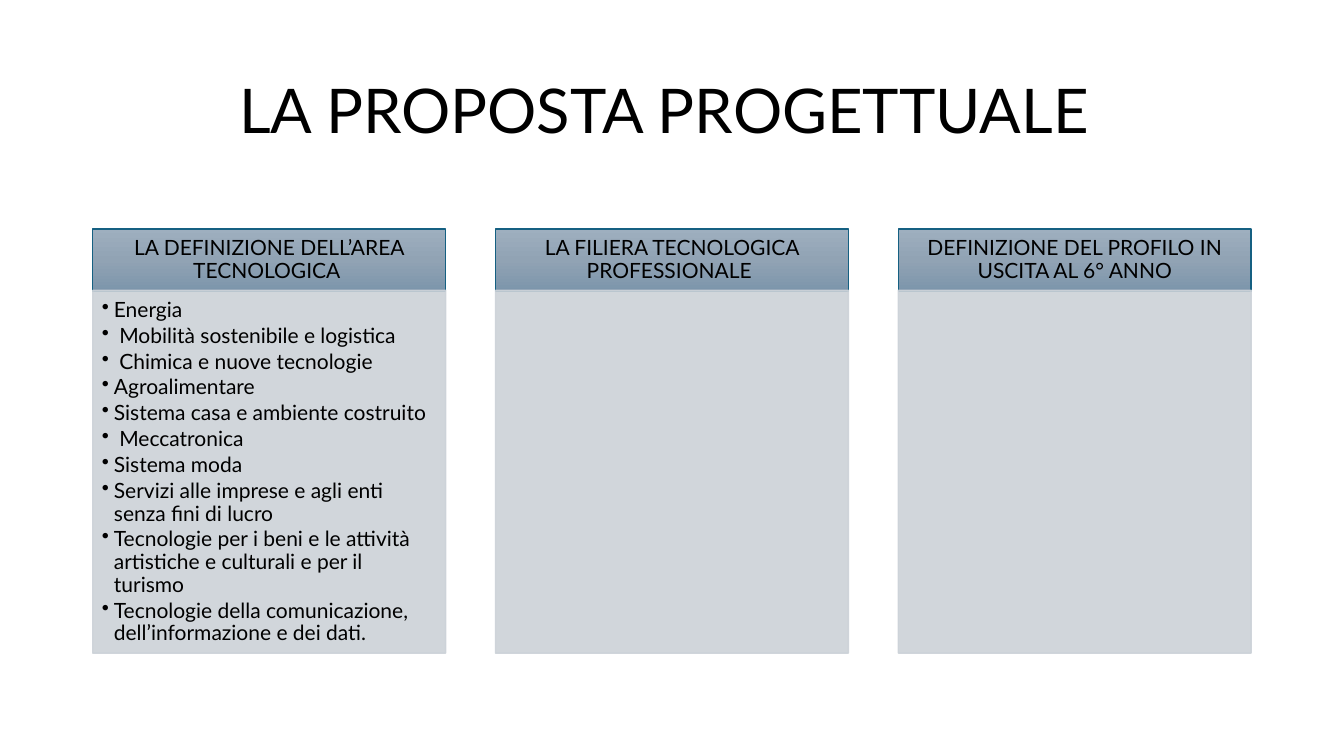
from copy import deepcopy

from lxml import etree
from pptx import Presentation
from pptx.dml.color import RGBColor
from pptx.enum import shapes, text
from pptx.oxml.ns import qn
from pptx.util import Inches, Pt

FONT = "Lato"
COLORS = {
    "text": "000000",
    "edge": "156082",
    "panel": "CCD2D8",
    "top": "9EAFBF",
    "mid": "91A3B4",
    "low": "7C95AB",
}
TITLE = "LA PROPOSTA PROGETTUALE "
AREAS = [
    "Energia",
    " Mobilità sostenibile e logistica",
    " Chimica e nuove tecnologie",
    "Agroalimentare",
    "Sistema casa e ambiente costruito",
    " Meccatronica",
    "Sistema moda",
    "Servizi alle imprese e agli enti senza fini di lucro",
    "Tecnologie per i beni e le attività artistiche e culturali e per il turismo",
    "Tecnologie della comunicazione, dell’informazione e dei dati.",
]
COLUMNS = [
    ("LA DEFINIZIONE DELL’AREA TECNOLOGICA ", AREAS),
    ("LA FILIERA TECNOLOGICA PROFESSIONALE ", []),
    ("DEFINIZIONE DEL PROFILO IN USCITA AL 6° ANNO", []),
]
LEFT, WIDTH, STEP = 0.92, 3.5, 3.995
HEAD_TOP, HEAD_HIGH = 2.27, 0.62
BODY_TOP, BODY_HIGH = 2.88, 3.6


def color(name):
    return RGBColor.from_string(COLORS[name])


def set_frame(frame, anchor, insets):
    frame.word_wrap = True
    frame.vertical_anchor = anchor
    sides = [Inches(inset) for inset in insets]
    frame.margin_left, frame.margin_top, frame.margin_right, frame.margin_bottom = sides


def set_para(para, words, size, align, after=0):
    para.text = words
    para.alignment = align
    para.line_spacing = 0.9
    para.space_after = Pt(after)
    para.font.name = FONT
    para.font.size = Pt(size)
    para.font.color.rgb = color("text")


def add_bullet(para):
    props = para._p.get_or_add_pPr()
    props.set("marL", str(Inches(0.12)))
    props.set("indent", str(Inches(-0.12)))
    mark = etree.Element(qn("a:buChar"), char="•")
    props.find(qn("a:defRPr")).addprevious(mark)


def add_rect(slide, left, top, high, edge):
    box = slide.shapes.add_shape(
        shapes.MSO_SHAPE.RECTANGLE,
        Inches(left), Inches(top), Inches(WIDTH), Inches(high),
    )
    box.shadow.inherit = False
    box.line.color.rgb = color(edge)
    box.line.width = Pt(1)
    return box


def fill_fade(box):
    box.fill.gradient()
    box.fill.gradient_angle = 270
    first = box._element.spPr.find(".//" + qn("a:gs"))
    first.addnext(deepcopy(first))
    for stop, name, place in zip(box.fill.gradient_stops, ("top", "mid", "low"), (0, 0.5, 1)):
        stop.color.rgb = color(name)
        stop.position = place


def add_title(slide):
    box = slide.shapes.add_textbox(Inches(LEFT), Inches(0.4), Inches(11.5), Inches(1.45))
    set_frame(box.text_frame, text.MSO_ANCHOR.MIDDLE, (0.1, 0.05, 0.1, 0.05))
    set_para(box.text_frame.paragraphs[0], TITLE, 44, text.PP_ALIGN.CENTER)


def add_head(slide, left, words):
    box = add_rect(slide, left, HEAD_TOP, HEAD_HIGH, "edge")
    fill_fade(box)
    set_frame(box.text_frame, text.MSO_ANCHOR.MIDDLE, (0.12, 0.07, 0.12, 0.07))
    set_para(box.text_frame.paragraphs[0], words, 15, text.PP_ALIGN.CENTER)


def add_body(slide, left, items):
    box = add_rect(slide, left, BODY_TOP, BODY_HIGH, "panel")
    box.fill.solid()
    box.fill.fore_color.rgb = color("panel")
    for tint in box._element.spPr.iter(qn("a:srgbClr")):
        etree.SubElement(tint, qn("a:alpha"), val="90000")
    frame = box.text_frame
    set_frame(frame, text.MSO_ANCHOR.TOP, (0.09, 0.09, 0.12, 0.13))
    for index, item in enumerate(items):
        para = frame.add_paragraph() if index else frame.paragraphs[0]
        set_para(para, item, 15, text.PP_ALIGN.LEFT, 2.25)
        add_bullet(para)


def main():
    deck = Presentation()
    deck.slide_width, deck.slide_height = Inches(13.33), Inches(7.5)
    slide = deck.slides.add_slide(deck.slide_layouts[6])
    add_title(slide)
    for index, (head, items) in enumerate(COLUMNS):
        left = LEFT + index * STEP
        add_head(slide, left, head)
        add_body(slide, left, items)
    deck.save("out.pptx")


if __name__ == "__main__":
    main()
